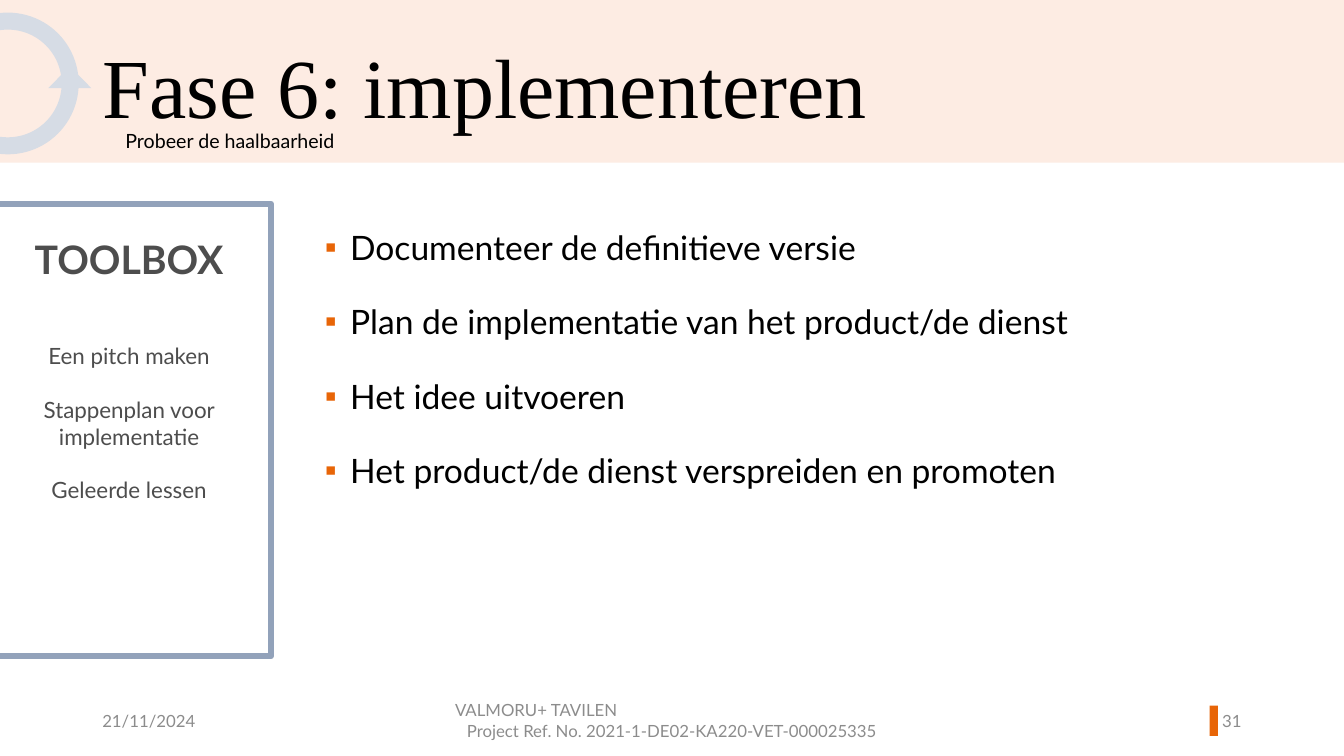
from dataclasses import dataclass

from lxml.etree import SubElement
from pptx import Presentation
from pptx.dml.color import RGBColor
from pptx.enum.shapes import MSO_SHAPE
from pptx.enum.text import MSO_ANCHOR, MSO_AUTO_SIZE, PP_ALIGN
from pptx.oxml.ns import qn
from pptx.util import Pt

EMU_PER_PX = 9525


@dataclass(frozen=True)
class Theme:
    band: str = "FDECE3"
    accent: str = "E86507"
    cycle: str = "D6DCE5"
    frame: str = "92A2BA"
    white: str = "FFFFFF"
    ink: str = "000000"
    tool_ink: str = "4D4D4D"
    muted: str = "8C8C8C"
    font: str = "Lato"
    title_font: str = "Times New Roman"
    bullet_font: str = "Times New Roman"
    title: int = 60
    heading: int = 28
    body: int = 24
    tool: int = 16
    subtitle: int = 14
    footer: int = 12


def px(*lengths):
    return [n * EMU_PER_PX for n in lengths]


def rgb(color):
    return RGBColor.from_string(color)


def write(tf, text, *, size, color, font, bold=False, align=PP_ALIGN.LEFT,
          before=0, spacing=None, bullet=None):
    """Add one formatted paragraph, using the first one while it is empty."""
    p = tf.paragraphs[0] if not tf.text else tf.add_paragraph()
    p.alignment, p.space_before = align, Pt(before)
    if spacing:
        p.line_spacing = spacing
    if bullet:
        pPr = p._p.get_or_add_pPr()
        indent = px(24)[0]
        pPr.set("marL", str(indent))
        pPr.set("indent", str(-indent))
        clr = SubElement(pPr, qn("a:buClr"))
        SubElement(clr, qn("a:srgbClr")).set("val", bullet)
        SubElement(pPr, qn("a:buFont")).set("typeface", Theme.bullet_font)
        SubElement(pPr, qn("a:buChar")).set("char", "▪")
    r = p.add_run()
    r.text = text
    r.font.name, r.font.size, r.font.bold = font, Pt(size), bold
    r.font.color.rgb = rgb(color)


class SlideBuilder:
    def __init__(self, prs, theme):
        self.theme = theme
        self.s = prs.slides.add_slide(prs.slide_layouts[5])

    def shape(self, kind, box, fill, line=None, width=1):
        sp = self.s.shapes.add_shape(kind, *px(*box))
        sp.shadow.inherit = False
        sp.fill.solid()
        sp.fill.fore_color.rgb = rgb(fill)
        if line:
            sp.line.color.rgb = rgb(line)
            sp.line.width = Pt(width)
        else:
            sp.line.fill.background()
        return sp

    def text(self, box, lines, anchor=MSO_ANCHOR.TOP, **style):
        """Add a text box; each line is a text with its own alignment."""
        tf = self.s.shapes.add_textbox(*px(*box)).text_frame
        tf.word_wrap, tf.vertical_anchor = True, anchor
        for text, align in lines:
            write(tf, text, align=align, font=self.theme.font, **style)

    def title(self, box, text):
        sp = self.s.shapes.title
        sp.left, sp.top, sp.width, sp.height = px(*box)
        tf = sp.text_frame
        tf.word_wrap, tf.auto_size = True, MSO_AUTO_SIZE.NONE
        tf.vertical_anchor = MSO_ANCHOR.TOP
        write(tf, text, size=self.theme.title, color=self.theme.ink,
              font=self.theme.title_font, spacing=0.9)
        sp._element.getparent().append(sp._element)  # in front of the band

    def toolbox(self, box, heading, tools):
        t = self.theme
        sp = self.shape(MSO_SHAPE.RECTANGLE, box, t.white, t.frame, 4.5)
        tf = sp.text_frame
        tf.word_wrap, tf.vertical_anchor = True, MSO_ANCHOR.TOP
        tf.margin_top = px(30)[0]
        style = dict(color=t.tool_ink, font=t.font, align=PP_ALIGN.CENTER)
        write(tf, heading, size=t.heading, bold=True, before=12, **style)
        for i, tool in enumerate(tools):
            write(tf, tool, size=t.tool, before=19 if i else 43, **style)


def main():
    prs = Presentation()
    prs.slide_width, prs.slide_height = px(1280, 720)
    t = Theme()
    b = SlideBuilder(prs, t)
    left, center, right = PP_ALIGN.LEFT, PP_ALIGN.CENTER, PP_ALIGN.RIGHT

    b.shape(MSO_SHAPE.RECTANGLE, (0, 0, 1280, 155), t.band)
    b.shape(MSO_SHAPE.RECTANGLE, (1152, 672, 8, 29), t.accent)

    steps = [
        "Documenteer de definitieve versie",
        "Plan de implementatie van het product/de dienst",
        "Het idee uitvoeren",
        "Het product/de dienst verspreiden en promoten",
    ]
    b.text((300, 192, 893, 457), [(step, left) for step in steps],
           size=t.body, color=t.ink, before=10, spacing=1.5, bullet=t.accent)

    footers = [
        (88, 288, [("21/11/2024", left)]),
        (424, 432, [("VALMORU+ TAVILEN", left),
                    ("Project Ref. No. 2021-1-DE02-KA220-VET-000025335", center)]),
        (1130, 62, [("31", right)]),
    ]
    for x, width, lines in footers:
        b.text((x, 667, width, 38), lines, MSO_ANCHOR.MIDDLE,
               size=t.footer, color=t.muted)

    b.title((88, 39, 953, 82), "Fase 6: implementeren")
    ring = b.shape(MSO_SHAPE.DONUT, (-60, 12, 135, 135), t.cycle)
    ring.adjustments[0] = 0.12
    b.shape(MSO_SHAPE.ISOSCELES_TRIANGLE, (46, 63, 41, 21), t.cycle)
    b.toolbox((-12, 194, 270, 431), "TOOLBOX",
              ["Een pitch maken", "Stappenplan voor implementatie", "Geleerde lessen"])
    b.text((110, 118, 372, 33), [("Probeer de haalbaarheid", left)],
           size=t.subtitle, color=t.ink)
    prs.save("out.pptx")


if __name__ == "__main__":
    main()
